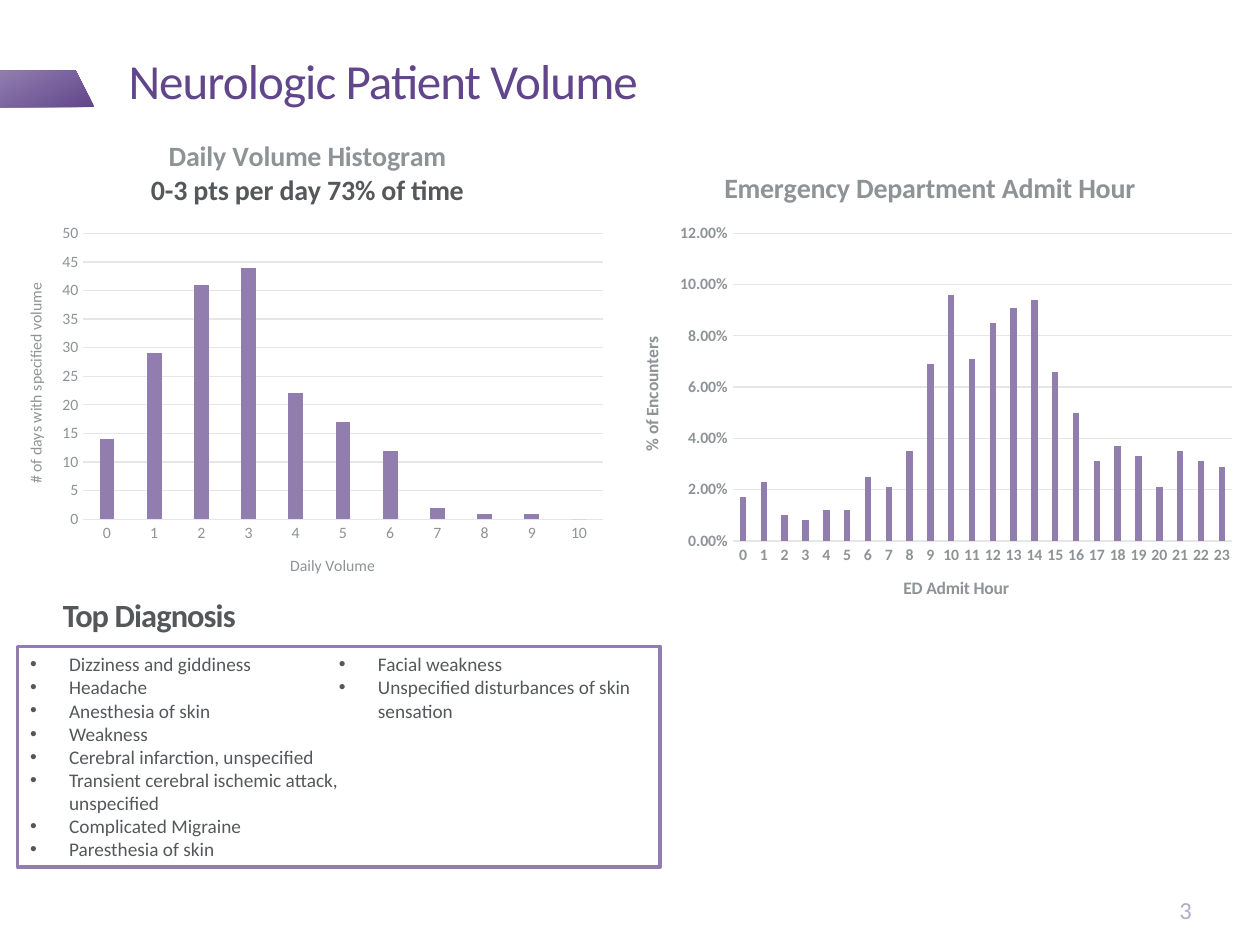
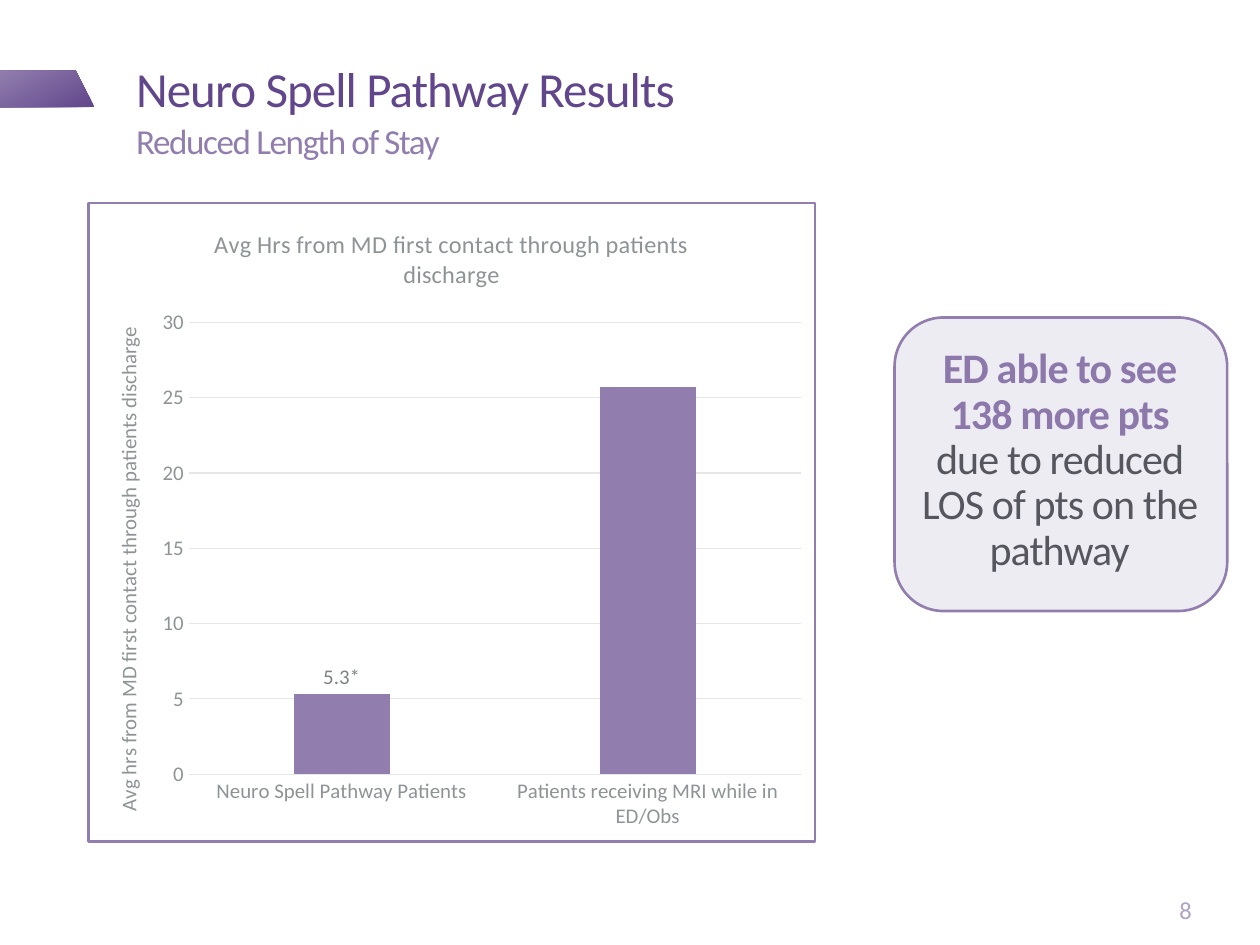
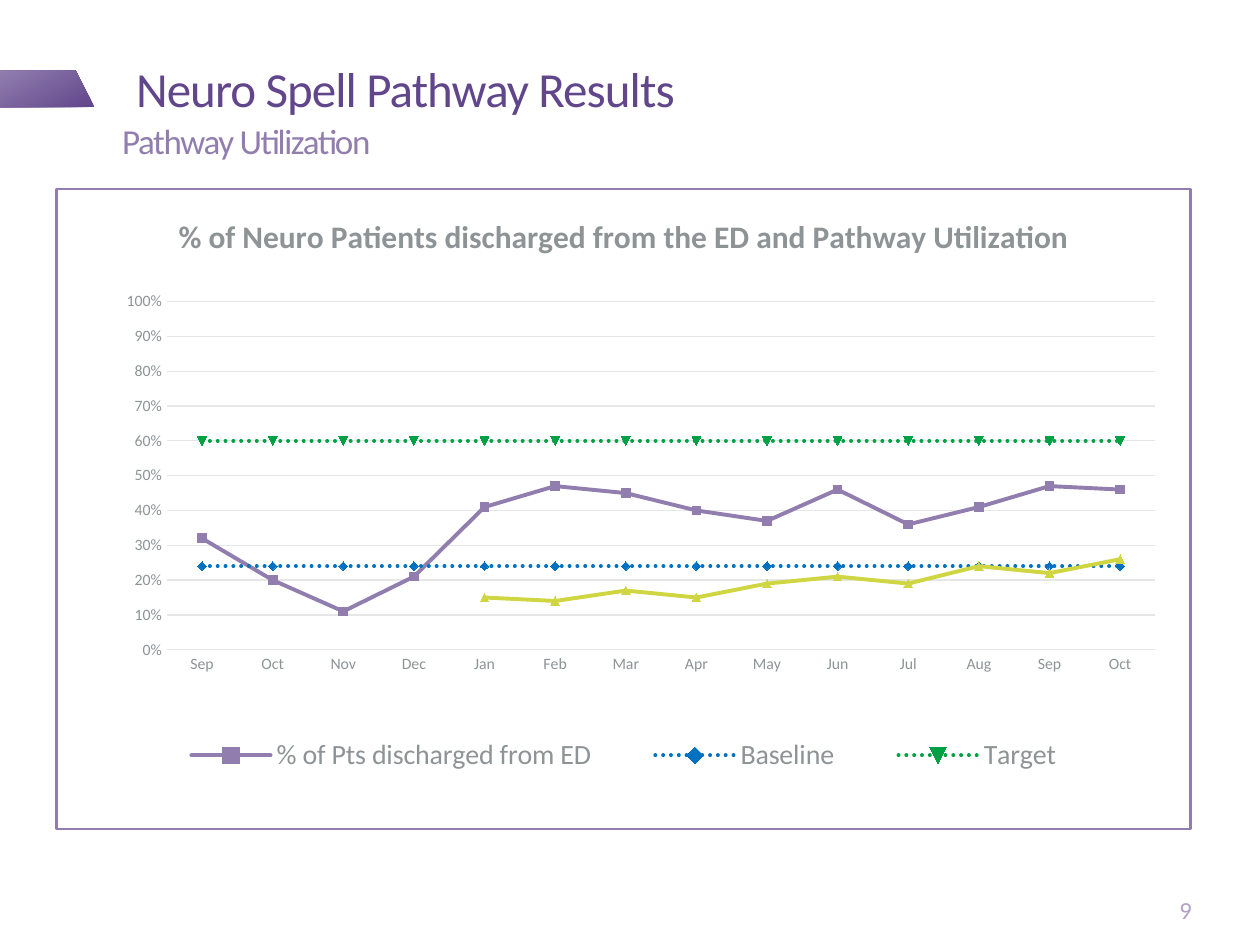
from pptx import Presentation
from pptx.chart.data import CategoryChartData
from pptx.dml.color import RGBColor
from pptx.enum.chart import (XL_CHART_TYPE, XL_LABEL_POSITION, XL_LEGEND_POSITION,
                             XL_TICK_MARK)
from pptx.enum.dml import MSO_LINE
from pptx.enum.shapes import MSO_SHAPE
from pptx.enum.text import MSO_ANCHOR, MSO_AUTO_SIZE, PP_ALIGN
from pptx.oxml import parse_xml
from pptx.oxml.ns import nsdecls
from pptx.util import Inches, Pt

BARS, LINES = XL_CHART_TYPE.COLUMN_CLUSTERED, XL_CHART_TYPE.LINE
LEFT, CENTER, RIGHT = PP_ALIGN.LEFT, PP_ALIGN.CENTER, PP_ALIGN.RIGHT
TOP, BOTTOM = MSO_ANCHOR.TOP, MSO_ANCHOR.BOTTOM
RECT, ROUND = MSO_SHAPE.RECTANGLE, MSO_SHAPE.ROUNDED_RECTANGLE
DOTS, NO_TICK = MSO_LINE.ROUND_DOT, XL_TICK_MARK.NONE

FONT = "Calibri"
DEEP, LILAC, PALE = "61468B", "917EAE", "B0A2C5"
INK, GRAY, GRID, WHITE = "54585A", "8E9396", "E5E6E7", "FFFFFF"
BLUE, GREEN, LIME, LABEL = "0070C0", "00A144", "CFD641", "7D8285"
FLUSH = (0, 0, 0, 0)
HEAD = (0, 0, 0.1, 0.05)
PLAIN = (0.1, 0.05, 0.1, 0.05)

DIAGNOSES = [
    "Dizziness and giddiness", "Headache", "Anesthesia of skin", "Weakness",
    "Cerebral infarction, unspecified",
    "Transient cerebral ischemic attack, unspecified",
    "Complicated Migraine", "Paresthesia of skin", "Facial weakness",
    "Unspecified disturbances of skin sensation",
]

ADMITS = {
    "kind": BARS, "at": (4.88, 1.17, 5, 3.79), "size": 9, "bold": True,
    "title": [("Emergency Department Admit Hour", GRAY)], "title_size": 16,
    "title_bold": True, "axis_size": 10,
    "x_title": "ED Admit Hour", "y_title": "% of Encounters",
    "top": 0.12, "step": 0.02, "fmt": "0.00%",
    "cats": [str(hour) for hour in range(24)],
    "series": [("Series 1", LILAC, None, [
        0.017, 0.023, 0.01, 0.008, 0.012, 0.012, 0.025, 0.021, 0.035, 0.069,
        0.096, 0.071, 0.085, 0.091, 0.094, 0.066, 0.05, 0.031, 0.037, 0.033,
        0.021, 0.035, 0.031, 0.029])],
}
DAILY = {
    "kind": BARS, "at": (0, 0.93, 4.88, 3.84), "size": 9,
    "title": [("Daily Volume Histogram", GRAY),
              ("0-3 pts per day 73% of time", INK)],
    "title_size": 16, "title_bold": True, "axis_size": 9,
    "x_title": "Daily Volume", "y_title": "# of days with specified volume",
    "top": 50, "step": 5, "fmt": "General",
    "cats": [str(count) for count in range(11)],
    "series": [("Series 1", LILAC, None,
                [14, 29, 41, 44, 22, 17, 12, 2, 1, 1, 0])],
}
STAY = {
    "kind": BARS, "at": (0.69, 1.6, 5.79, 5.09), "size": 12, "frame": True,
    "title": [("Avg Hrs from MD first contact through patients discharge", GRAY)],
    "title_size": 14, "axis_size": 12,
    "y_title": "Avg hrs from MD first contact through patients discharge",
    "top": 30, "step": 5, "fmt": "General",
    "cats": ["Neuro Spell Pathway Patients",
             "Patients receiving MRI while in ED/Obs"],
    "series": [("Series 1", LILAC, None, [5.3, 25.7])],
}
USAGE = {
    "kind": LINES, "at": (0.44, 1.49, 9.02, 5.1), "size": 9, "frame": True,
    "title": [("% of Neuro Patients discharged from the ED and Pathway Utilization",
               GRAY)],
    "title_size": 18, "title_bold": True,
    "top": 1, "step": 0.1, "fmt": "0%",
    "cats": ["Sep", "Oct", "Nov", "Dec", "Jan", "Feb", "Mar", "Apr", "May",
             "Jun", "Jul", "Aug", "Sep", "Oct"],
    "series": [
        ("% of Pts discharged from ED", LILAC, None,
         [0.32, 0.2, 0.11, 0.21, 0.41, 0.47, 0.45, 0.4, 0.37, 0.46, 0.36,
          0.41, 0.47, 0.46]),
        ("Baseline", BLUE, DOTS, [0.24] * 14),
        ("Target", GREEN, DOTS, [0.6] * 14),
        ("Pathway Utilization", LIME, None,
         [None] * 4 + [0.15, 0.14, 0.17, 0.15, 0.19, 0.21, 0.19, 0.24, 0.22,
                       0.26]),
    ],
}


def rgb(code):
    return RGBColor.from_string(code)


def place(at):
    return [Inches(value) for value in at]


def style(font, size, color, bold=False):
    look = {"name": FONT, "size": Pt(size), "bold": bold}
    for name, value in look.items():
        setattr(font, name, value)
    font.color.rgb = rgb(color)


def setup(frame, pad, anchor=TOP, wrap=True):
    look = dict(zip(("margin_left", "margin_top", "margin_right", "margin_bottom"),
                    place(pad)))
    look.update(word_wrap=wrap, vertical_anchor=anchor,
                auto_size=MSO_AUTO_SIZE.NONE)
    for name, value in look.items():
        setattr(frame, name, value)


def write(para, parts, size, align=LEFT, space=None, track=0):
    """Fill a paragraph with (text, colour, bold) parts."""
    para.alignment = align
    para.line_spacing = space
    for text, color, bold in parts:
        run = para.add_run()
        run.text = text
        style(run.font, size, color, bold)
        if track:
            run._r.get_or_add_rPr().set("spc", str(int(track * 100)))


def add_text(slide, at, pad=FLUSH, anchor=TOP, wrap=True):
    box = slide.shapes.add_textbox(*place(at))
    setup(box.text_frame, pad, anchor, wrap)
    return box.text_frame.paragraphs[0]


def add_box(slide, kind, at, fill, line=None, width=1.5):
    box = slide.shapes.add_shape(kind, *place(at))
    box.shadow.inherit = False
    box.fill.solid()
    box.fill.fore_color.rgb = rgb(fill)
    if line:
        box.line.color.rgb = rgb(line)
        box.line.width = Pt(width)
    else:
        box.line.fill.background()
    return box


def add_band(slide):
    pen = slide.shapes.build_freeform(0, Inches(0.56))
    pen.add_line_segments([place(point) for point in
                           ((0.6, 0.56), (0.75, 0.85), (0, 0.85))], close=True)
    band = pen.convert_to_shape()
    band.shadow.inherit = False
    band.line.fill.background()
    band.fill.gradient()
    band.fill.gradient_angle = 118
    for stop, color in zip(band.fill.gradient_stops, (DEEP, LILAC)):
        stop.color.rgb = rgb(color)


def add_slide(deck, title, number, at=(1.08, 0.15), tint=PALE):
    slide = deck.slides.add_slide(deck.slide_layouts[5])
    add_band(slide)
    head = slide.shapes.title
    head.left, head.top, head.width, head.height = place((*at, 8.44, 0.83))
    setup(head.text_frame, HEAD, BOTTOM)
    write(head.text_frame.paragraphs[0], [(title, DEEP, False)], 28,
          space=0.85, track=-0.5)
    para = add_text(slide, (9.08, 7.09, 0.38, 0.25), anchor=BOTTOM, wrap=False)
    write(para, [(number, tint, False)], 14, RIGHT)
    return slide


def add_sub(slide, text, left):
    para = add_text(slide, (left, 1, 7.5, 0.5), HEAD)
    write(para, [(text, LILAC, False)], 20, space=0.85, track=-0.8)


def layout(x, y, w, h, inner=False):
    target = '<c:layoutTarget val="inner"/>' if inner else ""
    sizes = "".join(f'<c:{key} val="{value}"/>'
                    for key, value in zip("xywh", (x, y, w, h)))
    return parse_xml(
        f'<c:layout {nsdecls("c")}><c:manualLayout>{target}'
        f'<c:xMode val="edge"/><c:yMode val="edge"/>{sizes}'
        '</c:manualLayout></c:layout>')


def set_axis(axis, info, title):
    axis.major_tick_mark = axis.minor_tick_mark = NO_TICK
    style(axis.tick_labels.font, info["size"], GRAY, info.get("bold", False))
    if title:
        frame = axis.axis_title.text_frame
        write(frame.paragraphs[0], [(title, GRAY, info.get("bold", False))],
              info["axis_size"], CENTER)
        return frame


def thin(line):
    line.color.rgb = rgb(GRID)
    line.width = Pt(0.75)


def add_frame(chart):
    chart._chartSpace.xpath("c:chart")[0].addnext(parse_xml(
        f'<c:spPr {nsdecls("c", "a")}>'
        f'<a:solidFill><a:srgbClr val="{WHITE}"/></a:solidFill>'
        f'<a:ln w="{Pt(1.5)}"><a:solidFill><a:srgbClr val="{LILAC}"/>'
        '</a:solidFill></a:ln></c:spPr>'))


def add_graph(slide, info):
    data = CategoryChartData()
    data.categories = info["cats"]
    for name, color, dash, values in info["series"]:
        data.add_series(name, values)
    chart = slide.shapes.add_chart(info["kind"], *place(info["at"]), data).chart
    style(chart.font, info["size"], INK)
    chart.has_legend = False
    if info.get("frame"):
        add_frame(chart)

    frame = chart.chart_title.text_frame
    for index, (text, color) in enumerate(info["title"]):
        para = frame.add_paragraph() if index else frame.paragraphs[0]
        write(para, [(text, color, info.get("title_bold", False))],
              info["title_size"], CENTER)
    chart.chart_title.include_in_layout = False

    cat, val = chart.category_axis, chart.value_axis
    set_axis(cat, info, info.get("x_title"))
    thin(cat.format.line)
    side = set_axis(val, info, info.get("y_title"))
    if side:
        side._txBody.bodyPr.set("rot", "-5400000")
        side._txBody.bodyPr.set("vert", "horz")
    val.format.line.fill.background()
    thin(val.major_gridlines.format.line)
    val.minimum_scale, val.maximum_scale = 0, info["top"]
    val.major_unit = info["step"]
    val.tick_labels.number_format = info["fmt"]
    val.tick_labels.number_format_is_linked = False

    plot = chart.plots[0]
    plot.vary_by_categories = False
    if info["kind"] == BARS:
        plot.gap_width, plot.overlap = 219, -27
    for series, (name, color, dash, values) in zip(plot.series, info["series"]):
        if info["kind"] == BARS:
            series.format.fill.solid()
            series.format.fill.fore_color.rgb = rgb(color)
        else:
            set_line(series, color, dash)
    return chart


def set_line(series, color, dash):
    series.smooth = False
    series.marker.style = None
    line = series.format.line
    line.color.rgb = rgb(color)
    line.width = Pt(2.25)
    if dash:
        line.dash_style = dash
    series._element.xpath("c:spPr/a:ln")[0].set("cap", "rnd")


def add_labels(chart):
    plot = chart.plots[0]
    plot.has_data_labels = True
    labels = plot.data_labels
    labels.show_value = True
    labels.number_format, labels.number_format_is_linked = "#,##0.0", False
    labels.position = XL_LABEL_POSITION.OUTSIDE_END
    style(labels.font, 12, LABEL)
    star = plot.series[0].points[0].data_label
    write(star.text_frame.paragraphs[0], [("5.3*", LABEL, False)], 12, CENTER)
    star.position = XL_LABEL_POSITION.OUTSIDE_END


def add_legend(chart, hidden):
    chart.has_legend = True
    legend = chart.legend
    legend.position = XL_LEGEND_POSITION.BOTTOM
    legend.include_in_layout = False
    style(legend.font, 16, GRAY)
    root = legend._element
    for old in root.xpath("c:layout"):
        root.remove(old)
    spot = root.xpath("c:legendPos")[0]
    spot.addnext(layout(0.07, 0.83, 0.86, 0.11))
    spot.addnext(parse_xml(
        f'<c:legendEntry {nsdecls("c")}><c:idx val="{hidden}"/>'
        '<c:delete val="1"/></c:legendEntry>'))


def fix_plot(chart, *sizes):
    area = chart._chartSpace.xpath("c:chart/c:plotArea")[0]
    for old in area.xpath("c:layout"):
        area.remove(old)
    area.insert(0, layout(*sizes, inner=True))


def add_list(slide):
    box = add_box(slide, RECT, (0.14, 5.13, 5.1, 1.75), WHITE, LILAC, 2)
    frame = box.text_frame
    setup(frame, PLAIN)
    frame._txBody.bodyPr.set("numCol", "2")
    for index, name in enumerate(DIAGNOSES):
        para = frame.add_paragraph() if index else frame.paragraphs[0]
        props = para._p.get_or_add_pPr()
        props.set("marL", str(Inches(0.31)))
        props.set("indent", str(-Inches(0.31)))
        props.append(parse_xml(f'<a:buFont {nsdecls("a")} typeface="Arial"/>'))
        props.append(parse_xml(f'<a:buChar {nsdecls("a")} char="•"/>'))
        write(para, [(name, INK, False)], 11)


def volume_slide(deck):
    slide = add_slide(deck, "Neurologic Patient Volume", "3", (1.02, 0.09), "B1ACCE")
    add_graph(slide, ADMITS)
    add_graph(slide, DAILY)
    add_list(slide)
    label = add_box(slide, RECT, (0.38, 4.76, 1.61, 0.19), WHITE)
    setup(label.text_frame, FLUSH)
    write(label.text_frame.paragraphs[0], [("Top Diagnosis", INK, True)], 18.5,
          CENTER, 0.9, -0.5)


def stay_slide(deck):
    slide = add_slide(deck, "Neuro Spell Pathway Results", "8")
    add_sub(slide, "Reduced Length of Stay", 1.08)
    add_labels(add_graph(slide, STAY))
    para = add_text(slide, (7.19, 2.71, 2.44, 1.92), PLAIN)
    write(para, [("ED able to see 138 more pts ", LILAC, True),
                 ("due to reduced LOS of pts on the pathway", INK, False)],
          24, CENTER, 0.9, -0.5)
    card = add_box(slide, ROUND, (7.1, 2.52, 2.64, 2.33), DEEP, LILAC)
    tint = card._element.spPr.xpath("a:solidFill/a:srgbClr")[0]
    tint.append(parse_xml(f'<a:alpha {nsdecls("a")} val="10000"/>'))


def usage_slide(deck):
    slide = add_slide(deck, "Neuro Spell Pathway Results", "9")
    add_sub(slide, "Pathway Utilization", 0.97)
    chart = add_graph(slide, USAGE)
    fix_plot(chart, 0.097, 0.176, 0.872, 0.544)
    add_legend(chart, hidden=3)


def main():
    deck = Presentation()
    deck.slide_width, deck.slide_height = Inches(10), Inches(7.5)
    for build in (volume_slide, stay_slide, usage_slide):
        build(deck)
    deck.save("out.pptx")


if __name__ == "__main__":
    main()
